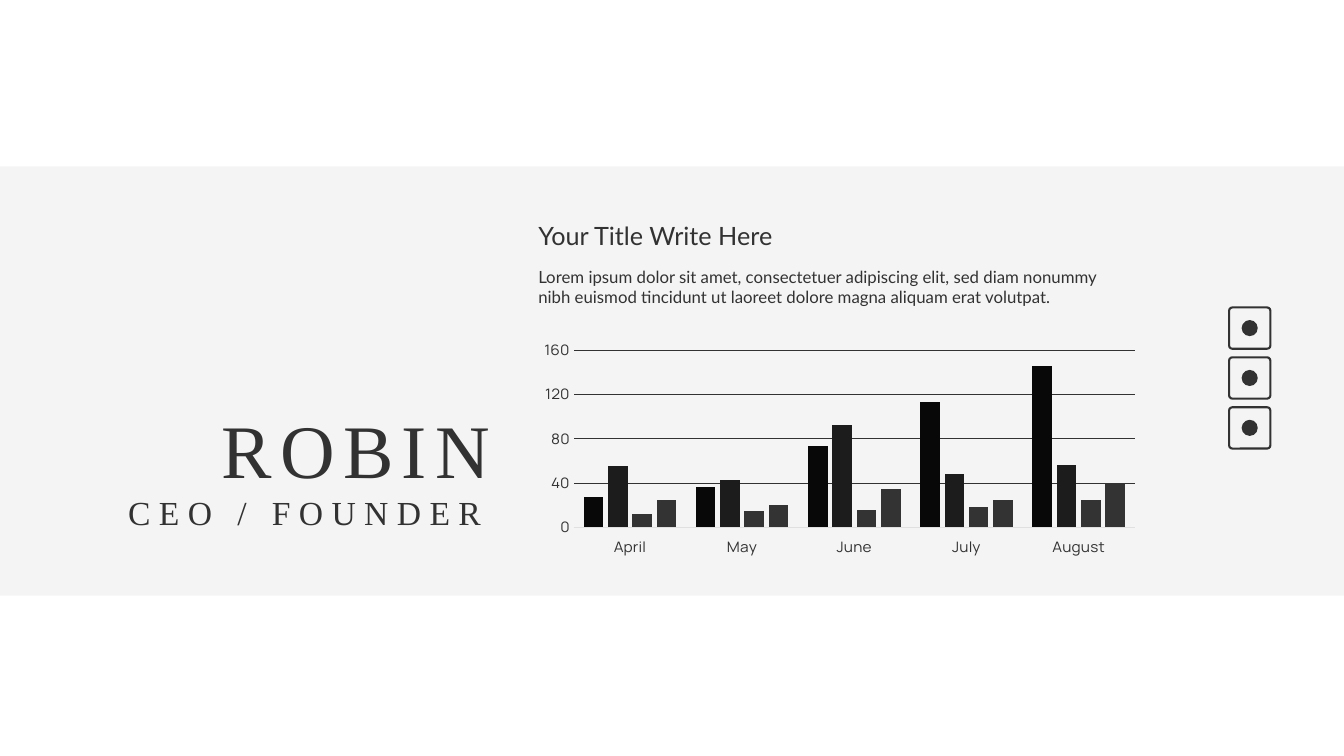
from lxml import etree
from pptx import Presentation
from pptx import util as u
from pptx.chart.data import CategoryChartData
from pptx.dml.color import RGBColor
from pptx.enum import chart as ch, shapes, text
from pptx.oxml import parse_xml
from pptx.oxml.ns import nsdecls, qn

# Content
INK = "323232"
TITLE = "Your Title Write Here"
BODY = ("Lorem ipsum dolor sit amet, consectetuer adipiscing elit, sed diam nonummy "
        "nibh euismod tincidunt ut laoreet dolore magna aliquam erat volutpat.")
NAME_LINES = [  # text, box, size
    ("ROBIN", (1.27, 3.95, 3.69, 1.01), 54),
    ("CEO / FOUNDER", (0.72, 4.83, 4.15, 0.5), 24),
]
MONTHS = ["April", "May", "June", "July", "August"]
SERIES = [
    ("Series 1", (27, 36, 73, 113, 146), "080808"),
    ("Series 2", (55, 43, 92, 48, 56), "1C1C1C"),
    ("Series 3", (12, 15, 16, 18, 25), "333333"),
    ("Series 4", (25, 20, 35, 25, 40), "333333"),
]

# Layout, in inches
WIDTH, HEIGHT = 13.33, 7.5
BAND = (0, 1.65, WIDTH, 4.26)
COLUMN_LEFT, COLUMN_WIDTH = 5.24, 6.02
BADGE_COUNT, BADGE_SIZE, BADGE_PITCH = 3, 0.41, 0.495
BADGE_LEFT, BADGE_TOP, DOT_SIZE = 12.19, 3.05, 0.16
PLOT = {"x": 0.075, "y": 0.033, "w": 0.925, "h": 0.87}


def rgb(value):
    return RGBColor.from_string(value)


def inches(box):
    return [u.Inches(n) for n in box]


def set_font(font, name, size, color=INK):
    font.name, font.size, font.bold = name, u.Pt(size), False
    font.color.rgb = rgb(color)


def write(sp, words, name, size, align=text.PP_ALIGN.LEFT, spacing=0):
    tf = sp.text_frame
    tf.word_wrap = True
    tf.auto_size = text.MSO_AUTO_SIZE.SHAPE_TO_FIT_TEXT
    tf.vertical_anchor = text.MSO_ANCHOR.TOP
    p = tf.paragraphs[0]
    r = p.add_run()
    r.text = words
    p.alignment = align
    set_font(p.font, name, size)
    if spacing:
        r.font._element.set("spc", str(spacing * 100))


def add_shape(kind, box, fill=None, line=None, weight=1.5):
    sp = s.shapes.add_shape(kind, *inches(box))
    sp.shadow.inherit = False
    if fill:
        sp.fill.solid()
        sp.fill.fore_color.rgb = rgb(fill)
    else:
        sp.fill.background()
    if line:
        sp.line.color.rgb = rgb(line)
        sp.line.width = u.Pt(weight)
    else:
        sp.line.fill.background()
    return sp


def add_column_chart(box):
    data = CategoryChartData()
    data.categories = MONTHS
    for name, values, _ in SERIES:
        data.add_series(name, values)
    chart = s.shapes.add_chart(ch.XL_CHART_TYPE.COLUMN_CLUSTERED, *inches(box), data).chart
    chart.has_legend = chart.has_title = False
    set_font(chart.font, "Manrope", 11)

    plot = chart.plots[0]
    plot.gap_width, plot.overlap, plot.vary_by_categories = 100, -24, False
    for series, (_, _, color) in zip(plot.series, SERIES):
        series.format.fill.solid()
        series.format.fill.fore_color.rgb = rgb(color)

    months, values = chart.category_axis, chart.value_axis
    for axis in (months, values):
        axis.major_tick_mark = axis.minor_tick_mark = ch.XL_TICK_MARK.NONE
        set_font(axis.tick_labels.font, "Manrope", 11)
    months.tick_label_position = ch.XL_TICK_LABEL_POSITION.LOW
    values.minimum_scale, values.maximum_scale, values.major_unit = 0, 160, 40
    values.format.line.fill.background()
    values.has_major_gridlines = True
    for line, color in ((months.format.line, "E0E0E0"),
                        (values.major_gridlines.format.line, INK)):
        line.color.rgb = rgb(color)
        line.width = u.Pt(0.75)

    # Fixed inner plot area
    area = chart._chartSpace.chart.plotArea
    for old in area.findall(qn("c:layout")):
        area.remove(old)
    modes = '<c:xMode val="edge"/><c:yMode val="edge"/>'
    sizes = "".join(f'<c:{key} val="{share}"/>' for key, share in PLOT.items())
    area.insert(0, parse_xml(
        f'<c:layout {nsdecls("c")}><c:manualLayout><c:layoutTarget val="inner"/>'
        f"{modes}{sizes}</c:manualLayout></c:layout>"))


prs = Presentation()
prs.slide_width, prs.slide_height = inches((WIDTH, HEIGHT))
s = prs.slides.add_slide(prs.slide_layouts[5])

# Translucent band, behind the title
band = add_shape(shapes.MSO_SHAPE.RECTANGLE, BAND, "F2F2F2")
color = band.fill._xPr.find(qn("a:solidFill"))[0]
etree.SubElement(color, qn("a:alpha")).set("val", "80000")
title = s.shapes.title
title._element.addprevious(band._element)

# Title and body text
title.left, title.top, title.width, title.height = inches((COLUMN_LEFT, 2.14, 5.6, 0.4))
write(title, TITLE, "Lato", 18)
body = s.shapes.add_textbox(*inches((COLUMN_LEFT, 2.6, COLUMN_WIDTH, 0.5)))
write(body, BODY, "Lato", 12)

# Name and role
for words, box, size in NAME_LINES:
    write(s.shapes.add_textbox(*inches(box)), words, "Times New Roman", size,
          text.PP_ALIGN.RIGHT, spacing=6)

add_column_chart((COLUMN_LEFT, 3.37, COLUMN_WIDTH, 2.16))

# Social badges: a rounded frame around a plain dot
inset = (BADGE_SIZE - DOT_SIZE) / 2
for i in range(BADGE_COUNT):
    top = BADGE_TOP + i * BADGE_PITCH
    frame = add_shape(shapes.MSO_SHAPE.ROUNDED_RECTANGLE,
                      (BADGE_LEFT, top, BADGE_SIZE, BADGE_SIZE), line=INK)
    frame.adjustments[0] = 0.08
    add_shape(shapes.MSO_SHAPE.OVAL,
              (BADGE_LEFT + inset, top + inset, DOT_SIZE, DOT_SIZE), INK)

prs.save("out.pptx")
